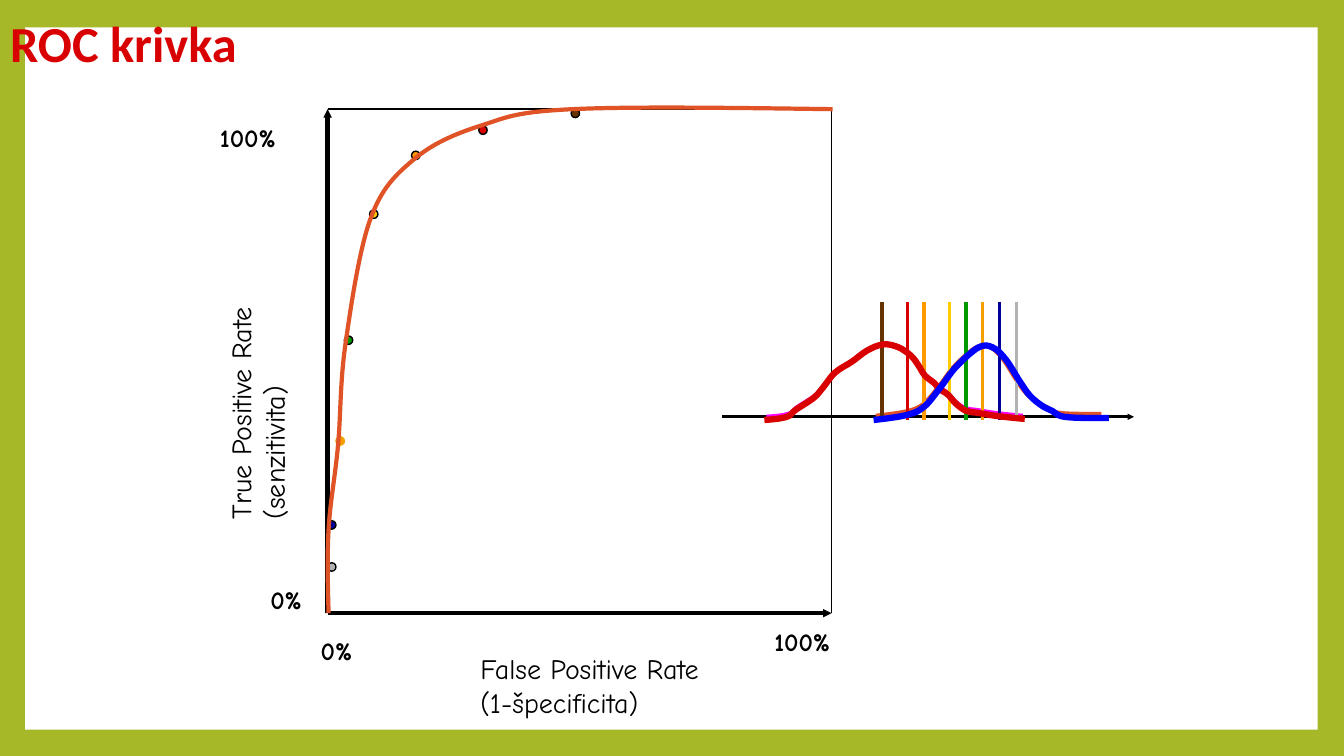
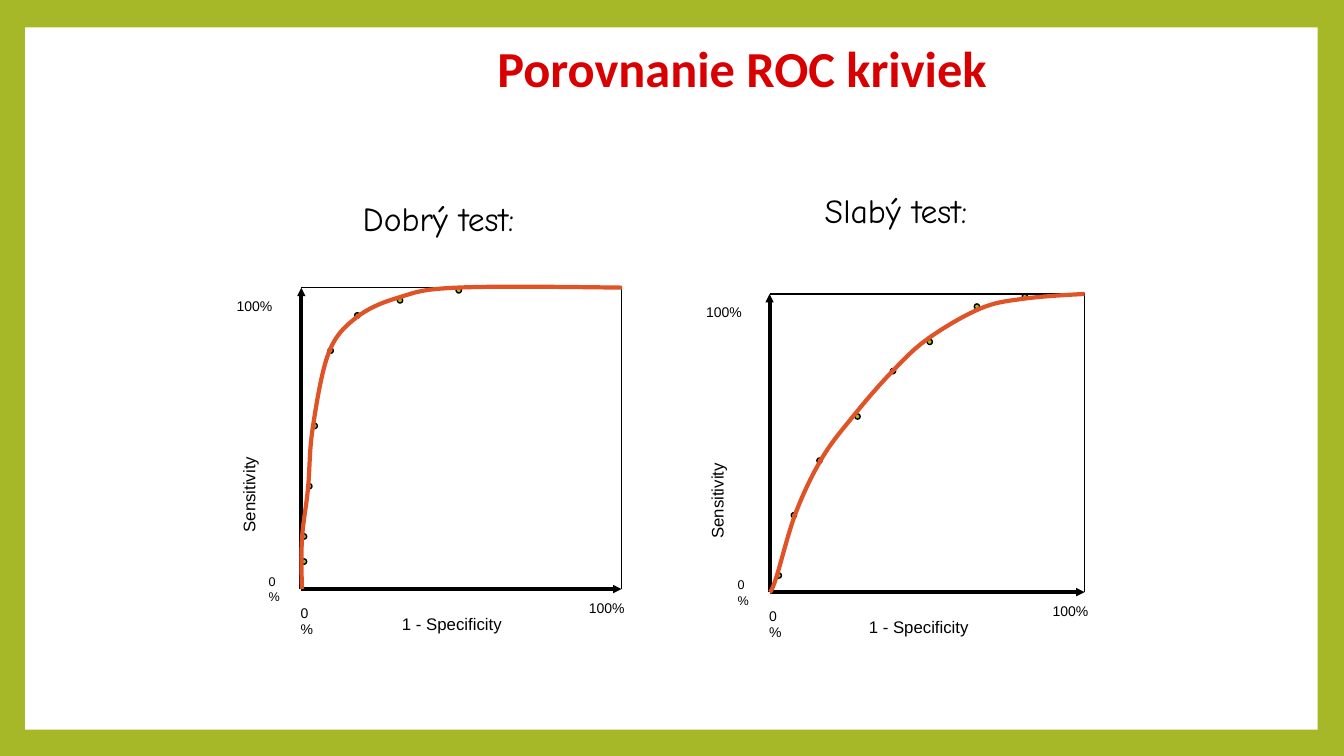
from pptx import Presentation
from pptx.dml.color import RGBColor
from pptx.enum.shapes import MSO_CONNECTOR, MSO_SHAPE
from pptx.enum.text import MSO_ANCHOR, MSO_AUTO_SIZE, PP_ALIGN
from pptx.oxml.ns import qn
from pptx.util import Emu, Pt
from lxml import etree

STRAIGHT = MSO_CONNECTOR.STRAIGHT
RECT, OVAL = MSO_SHAPE.RECTANGLE, MSO_SHAPE.OVAL
MIDDLE, LEFT = MSO_ANCHOR.MIDDLE, PP_ALIGN.LEFT
GROW = MSO_AUTO_SIZE.SHAPE_TO_FIT_TEXT

UNIT = 9525
GREEN, WHITE, BLACK = "A6B727", "FFFFFF", "000000"
RED, ORANGE, BLUE, PINK = "D80000", "DF5327", "0000FF", "FF00FF"
COMIC, ARIAL, HEAD = "Comic Neue", "Arial", "Calibri"

GRID = (480, 480)
GOOD = [(481, 0), (233, 0), (145, 16), (82, 48), (41, 104), (17, 224),
        (10, 320), (1, 400), (1, 480)]
GOOD_DOTS = [(232, 0), (144, 16), (80, 40), (40, 96), (16, 216), (8, 312),
             (0, 392), (0, 432)]
WEAK = [(480, 0), (385, 8), (320, 24), (240, 73), (184, 128), (128, 196),
        (80, 264), (40, 352), (10, 457), (0, 480)]
WEAK_DOTS = [(385, 0), (312, 16), (240, 73), (184, 120), (130, 193),
             (72, 264), (33, 352), (10, 449)]

SICK_GRID = (258, 75)
SICK = [(0, 75), (22, 72), (31, 65), (49, 53), (58, 43), (70, 28), (87, 17),
        (102, 6), (118, 0), (133, 3), (146, 12), (154, 23), (159, 31),
        (169, 39), (173, 44), (182, 50), (190, 59), (200, 66), (212, 68),
        (230, 71), (258, 74)]
WELL_GRID = (233, 75)
WELL = [(0, 75), (33, 70), (50, 62), (66, 43), (82, 22), (104, 3), (118, 3),
        (131, 15), (145, 37), (155, 51), (167, 61), (177, 66), (190, 72),
        (233, 73)]

CUTS = [(152, "663300"), (176, RED), (192, "FF9900"), (216, "FFCC00"),
        (232, "009900"), (248, "F59E00"), (264, "000099"), (280, "B2B2B2")]
TINTS = [tint for _, tint in CUTS]
EDGES = [tint if tint == "F59E00" else BLACK for tint in TINTS]


def px(size):
    """Turn px into EMU."""
    return Emu(round(size * UNIT))


def rgb(code):
    """Turn a hex string into a colour."""
    return RGBColor.from_string(code)


def fit(box, grid, spot):
    """Map a grid point into a box."""
    left, top, wide, high = box
    return left + spot[0] * wide / grid[0], top + spot[1] * high / grid[1]


def style(frame, text, size=18, font=COMIC, color=BLACK, bold=False):
    """Write formatted text into a frame."""
    frame.word_wrap = True
    frame.text = text
    para = frame.paragraphs[0]
    para.alignment = LEFT
    face = para.runs[0].font
    face.size, face.name, face.bold = Pt(size), font, bold
    face.color.rgb = rgb(color)
    return para


def label(slide, text, box, turn=0, **look):
    """Add a text box."""
    item = slide.shapes.add_textbox(*map(px, box))
    item.rotation = turn
    style(item.text_frame, text, **look)
    item.text_frame.auto_size = GROW


def shape(slide, kind, box, fill, edge=None):
    """Add a flat preset shape."""
    item = slide.shapes.add_shape(kind, *map(px, box))
    item.shadow.inherit = False
    item.fill.solid()
    item.fill.fore_color.rgb = rgb(fill)
    if edge:
        item.line.color.rgb = rgb(edge)
        item.line.width = Pt(1)
    else:
        item.line.fill.background()
    return item


def line(slide, start, end, color=BLACK, width=1, arrow=False):
    """Add a straight line, with an arrowhead if asked."""
    item = slide.shapes.add_connector(STRAIGHT, *map(px, (*start, *end)))
    item.line.color.rgb = rgb(color)
    item.line.width = Pt(width)
    props = item._element.spPr
    if arrow:
        etree.SubElement(props.find(qn("a:ln")), qn("a:tailEnd"),
                         type="triangle", w="sm", len="sm")
    etree.SubElement(props, qn("a:effectLst"))


def bend(knots):
    """List the knots with the two handles of each span between them."""
    last = len(knots) - 1
    trail = [knots[0]]
    for i in range(last):
        pairs = []
        for axis in (0, 1):
            a, b = knots[i][axis], knots[i + 1][axis]
            c = a + (b - knots[max(i - 1, 0)][axis]) / 6
            d = b - (knots[min(i + 2, last)][axis] - a) / 6
            if i == 0:
                c = (a + d) / 2
            if i == last - 1:
                d = (c + b) / 2
            pairs.append((c, d, b))
        trail.extend(zip(*pairs))
    return trail


def curve(slide, box, grid, knots, color, width=3):
    """Draw a smooth open curve in a box."""
    trail = [tuple(map(px, fit(box, grid, spot))) for spot in bend(knots)]
    pen = slide.shapes.build_freeform(*trail[0])
    pen.add_line_segments(trail[1:], close=False)
    item = pen.convert_to_shape()
    steps = list(item._element.iter(qn("a:lnTo")))
    for i in range(0, len(steps), 3):
        arc = etree.SubElement(steps[i].getparent(), qn("a:cubicBezTo"))
        for step in steps[i:i + 3]:
            arc.append(step[0])
            step.getparent().remove(step)
    item.shadow.inherit = False
    item.fill.background()
    item.line.color.rgb = rgb(color)
    item.line.width = Pt(width)


def plot(slide, box, knots, dots, names, tall, tints, edges, name, tick, zero):
    """Draw a ROC plot with its axes, labels, dots and curve."""
    left, top, wide, high = box
    right, base = left + wide, top + high
    line(slide, (left, top), (right, top))
    line(slide, (right, top), (right, base))
    line(slide, (left, base), (left, top), width=3, arrow=True)
    line(slide, (left, base), (right, base), width=3, arrow=True)

    def place(text, x, y, room, look):
        """Add a label at a grid point."""
        spot = fit(box, GRID, (x, y))
        label(slide, text, (*spot, room * wide / GRID[0], 38), **look)

    place("0%", -64, 448, 56, zero)
    place("100%", -112, 8, 104, tick)
    place("0%", -16, 496, 56, tick)
    place("100%", 416, 488, 88, tick)
    place(names[1], 136, 512, 256, name)
    x, y, room, deep = tall
    label(slide, names[0], (left + x, top + y, room, deep), turn=270, **name)
    size = wide / 60
    for spot, tint, edge in zip(dots, tints, edges):
        shape(slide, OVAL, (*fit(box, GRID, spot), size, size), tint, edge)
    curve(slide, box, GRID, knots, ORANGE)


def bells(slide, box):
    """Draw two overlapping distributions with their cut-off lines."""
    left, top, wide, high = box
    line(slide, (left, top + 109), (left + wide, top + 109),
         width=2.25, arrow=True)
    peak = top + 40
    curve(slide, (left + 146, peak, 215, 68), WELL_GRID, WELL, ORANGE)
    curve(slide, (left + 42, peak, 244, 69), SICK_GRID, SICK, PINK)
    for x, tint in CUTS:
        line(slide, (left + x, top), (left + x, top + high), tint, 2.25)
    curve(slide, (left + 40, peak, 248, 72), SICK_GRID, SICK, RED, 4.5)
    curve(slide, (left + 144, peak, 224, 72), WELL_GRID, WELL, BLUE, 4.5)


def page(deck, title, left, top):
    """Add a slide with the shared title style."""
    slide = deck.slides.add_slide(deck.slide_layouts[5])
    head = slide.shapes.title
    head.left, head.top, head.width, head.height = map(
        px, (left, top, 816, 120))
    head.text_frame.vertical_anchor = MIDDLE
    para = style(head.text_frame, title, size=36, font=HEAD, color=RED,
                 bold=True)
    para.line_spacing = 0.9
    return slide


def frame(deck, slide):
    """Put the green ground and white panel on the master."""
    master = deck.slide_master
    master.background.fill.solid()
    master.background.fill.fore_color.rgb = rgb(GREEN)
    panel = shape(slide, RECT, (24, 26, 1231, 669), WHITE)._element
    panel.nvSpPr.cNvPr.set("id", "99")
    master.shapes._spTree.insert(2, panel)


def single(deck):
    """Build the slide with one large ROC plot."""
    slide = page(deck, "ROC krivka", 0, -16)
    frame(deck, slide)
    tick = {"size": 18, "bold": True}
    names = ("True Positive Rate (senzitivita)",
             "False Positive Rate (1-špecificita)")
    plot(slide, (312, 104, 480, 480), GOOD, GOOD_DOTS, names,
         (-211, 219, 288, 74), TINTS, EDGES, {"size": 20}, tick, tick)
    bells(slide, (688, 288, 392, 112))


def double(deck):
    """Build the slide that compares two ROC plots."""
    slide = page(deck, "Porovnanie ROC kriviek", 464, 8)
    name, tick, zero = ({"size": size, "font": ARIAL} for size in (12, 10, 9))
    names = ("Sensitivity", "1 - Specificity")
    tests = [
        ("Slabý test:", (776, 176), (733, 280, 300, 284), WEAK, WEAK_DOTS),
        ("Dobrý test:", (336, 184), (287, 274, 305, 287), GOOD, GOOD_DOTS)]
    for text, spot, box, knots, dots in tests:
        plot(slide, box, knots, dots, names, (-136, 142, 172, 29),
             [GREEN] * len(dots), [BLACK] * len(dots), name, tick, zero)
        label(slide, text, (*spot, 224, 48), size=24)


def main():
    """Build and save the deck."""
    deck = Presentation()
    deck.slide_width, deck.slide_height = px(1280), px(720)
    single(deck)
    double(deck)
    deck.save("out.pptx")


if __name__ == "__main__":
    main()
